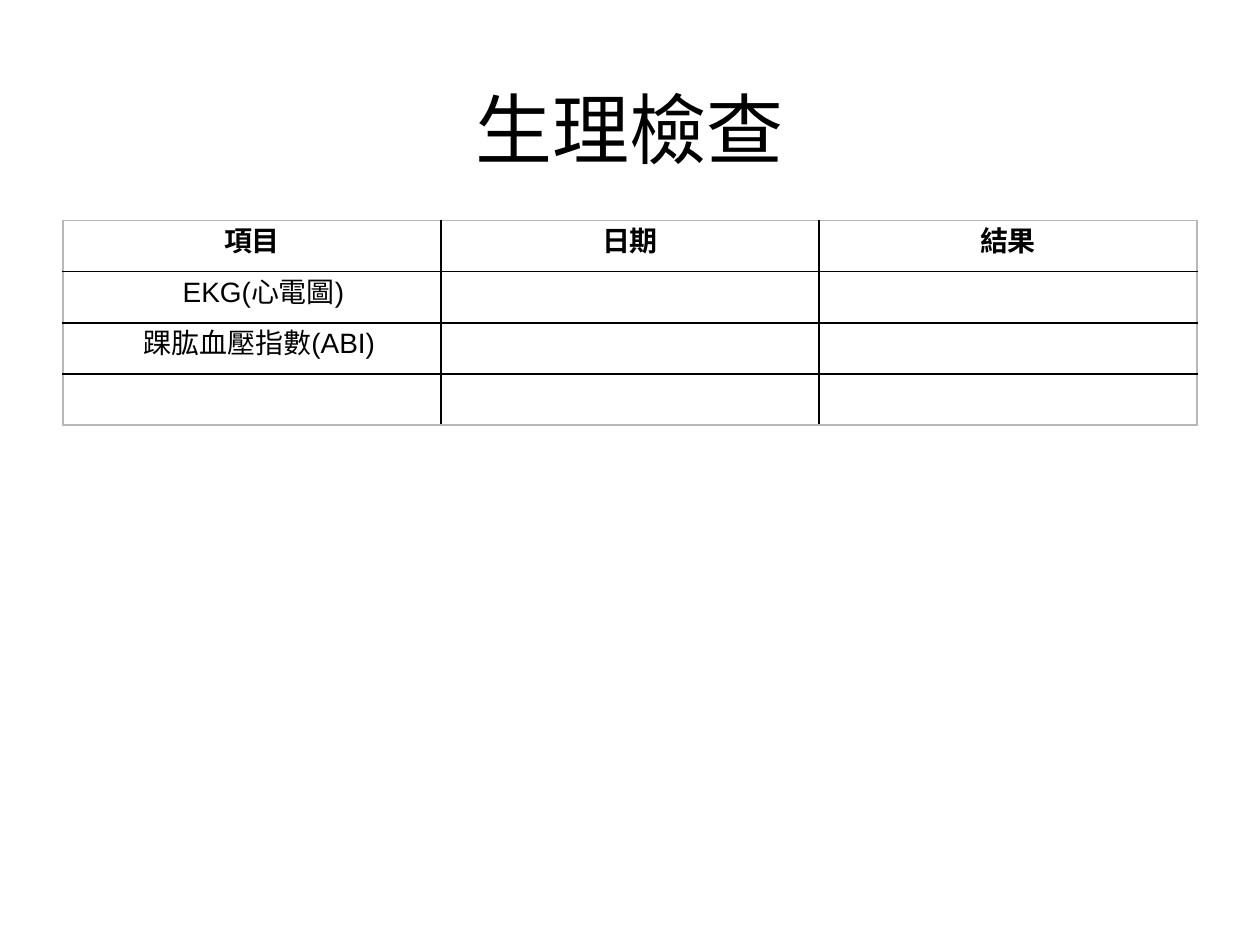
import pptx
import pptx.util
import pptx.dml.color
import pptx.enum.text
import pptx.oxml.ns
import lxml.etree

Pt = pptx.util.Pt


def color(code):
    return pptx.dml.color.RGBColor.from_string(code)


def write(frame, text, size=16, font="Arial", bold=False, lead=None, indent=0):
    para = frame.paragraphs[0]
    para.alignment = pptx.enum.text.PP_ALIGN.CENTER
    if lead:
        para.line_spacing = Pt(lead)
    if indent:
        para._p.get_or_add_pPr().set("indent", str(Pt(indent)))
    run = para.add_run()
    run.text = text
    run.font.size = Pt(size)
    run.font.name = font
    run.font.bold = bold
    run.font.color.rgb = color("000000")


deck = pptx.Presentation()
deck.slide_width, deck.slide_height = Pt(720), Pt(540)
slide = deck.slides.add_slide(deck.slide_layouts[5])

title = slide.shapes.title
title.left, title.top, title.width, title.height = Pt(36), Pt(28), Pt(648), Pt(90)
title.text_frame.vertical_anchor = pptx.enum.text.MSO_ANCHOR.MIDDLE
write(title.text_frame, "生理檢查", size=44, font="Calibri")

rows = [
    ["項目", "日期", "結果"],
    ["EKG(心電圖)", "", ""],
    ["踝肱血壓指數(ABI) ", "", ""],
    ["", "", ""],
]
high, wide = len(rows), len(rows[0])
table = slide.shapes.add_table(high, wide, Pt(36), Pt(126), Pt(648), Pt(29.25 * high)).table
table.first_row = table.horz_banding = False

for r, row in enumerate(rows):
    for c, text in enumerate(row):
        cell = table.cell(r, c)
        cell.vertical_anchor = pptx.enum.text.MSO_ANCHOR.MIDDLE
        cell.margin_left = cell.margin_right = Pt(1.5)
        cell.margin_top = cell.margin_bottom = 0
        if text:
            write(cell.text_frame, text, bold=r == 0, lead=15, indent=13 if r else 0)
        props = cell._tc.get_or_add_tcPr()
        edges = {"L": c == 0, "R": c == wide - 1, "T": r == 0, "B": r == high - 1}
        for side, outer in edges.items():
            line = lxml.etree.SubElement(props, pptx.oxml.ns.qn("a:ln" + side), w=str(Pt(1)))
            fill = lxml.etree.SubElement(line, pptx.oxml.ns.qn("a:solidFill"))
            shade = "B8B8B8" if outer else "000000"
            lxml.etree.SubElement(fill, pptx.oxml.ns.qn("a:srgbClr"), val=shade)
        cell.fill.background()

deck.save("out.pptx")
